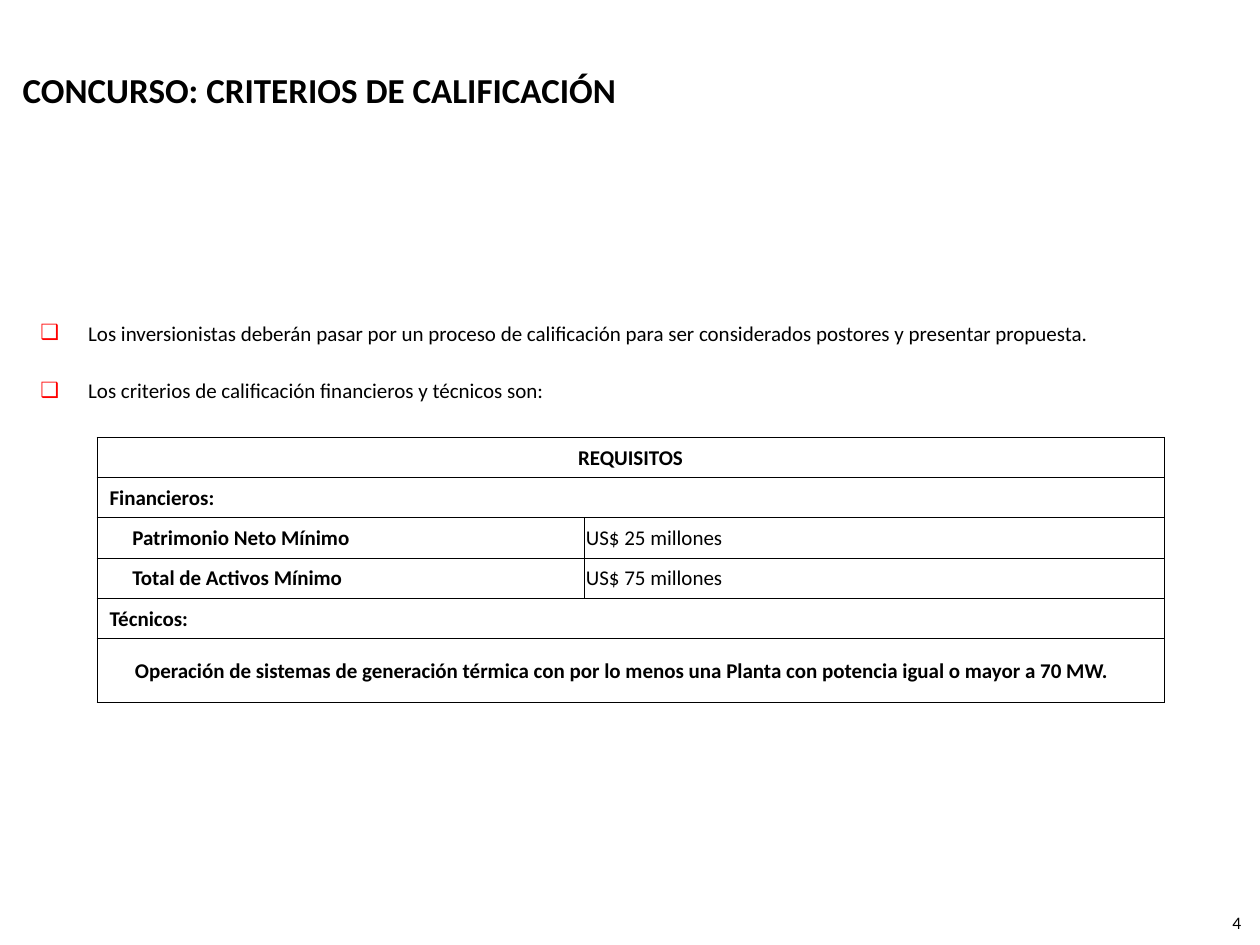
import pptx
import pptx.util
import pptx.dml.color
import pptx.enum.text
import pptx.oxml
import pptx.oxml.ns
from lxml import etree

BLACK = pptx.dml.color.RGBColor(0, 0, 0)
RED = pptx.dml.color.RGBColor(255, 0, 0)
WIDTH, HEIGHT = pptx.util.Inches(10), pptx.util.Inches(7.5)
FONT = "Calibri"
ALIGN = pptx.enum.text.PP_ALIGN
MIDDLE = pptx.enum.text.MSO_ANCHOR.MIDDLE

TITLE = "CONCURSO: CRITERIOS DE CALIFICACIÓN"
BULLETS = [
    "Los inversionistas deberán pasar por un proceso de calificación para ser considerados postores y presentar propuesta.",
    "Los criterios de calificación financieros y técnicos son:",
]
REQUIREMENTS = [
    ("REQUISITOS",),
    ("Financieros:",),
    ("Patrimonio Neto Mínimo", "US$ 25 millones"),
    ("Total de Activos Mínimo", "US$ 75 millones"),
    ("Técnicos:",),
    ("Operación de sistemas de generación térmica con por lo menos una Planta con potencia igual o mayor a 70 MW.",),
]
COLUMN_WIDTHS = [3.87, 4.6]
ROW_HEIGHTS = [0.32] * 5 + [0.51]
LABEL_INDENTS = [0.01, 0.1, 0.28, 0.28, 0.1, 0.3]


def percent(left, top, width, height):
    return [int(share * size / 100) for share, size in
            zip((left, top, width, height), (WIDTH, HEIGHT) * 2)]


def apply(obj, values):
    for name, value in values.items():
        setattr(obj, name, value)


def place(sp, box):
    apply(sp, dict(zip(("left", "top", "width", "height"), box)))


def write(p, text, size, bold=False, align=ALIGN.LEFT):
    r = p.add_run()
    r.text = text
    p.alignment = align
    apply(r.font, {"name": FONT, "size": pptx.util.Pt(size), "bold": bold})
    r.font.color.rgb = BLACK


def add_title(s):
    sp = s.shapes.title
    place(sp, percent(0.8, 5.47, 94.5, 8))
    tf = sp.text_frame
    apply(tf, {"vertical_anchor": MIDDLE, "word_wrap": True,
               "auto_size": pptx.enum.text.MSO_AUTO_SIZE.NONE})
    write(tf.paragraphs[0], TITLE, 20, True)


def add_bullet(p):
    pPr = p._p.get_or_add_pPr()
    indent = pptx.util.Inches(0.38)
    pPr.set("marL", str(indent))
    pPr.set("indent", str(-indent))
    color = etree.SubElement(pPr, pptx.oxml.ns.qn("a:buClr"))
    etree.SubElement(color, pptx.oxml.ns.qn("a:srgbClr"), val=str(RED))
    etree.SubElement(pPr, pptx.oxml.ns.qn("a:buChar"), char="❑")


def add_list(s):
    sp = s.placeholders[1]
    place(sp, percent(2.2, 33.2, 94.8, 48.4))
    tf = sp.text_frame
    tf.auto_size = pptx.enum.text.MSO_AUTO_SIZE.NONE
    for i, text in enumerate(BULLETS):
        p = tf.add_paragraph() if i else tf.paragraphs[0]
        add_bullet(p)
        p.space_before = pptx.util.Pt(18.5 if i else 0)
        write(p, text, 12)


def add_borders(cell):
    tcPr = cell._tc.get_or_add_tcPr()
    for i, side in enumerate(("lnL", "lnR", "lnT", "lnB")):
        tcPr.insert(i, pptx.oxml.parse_xml(
            f'<a:{side} {pptx.oxml.ns.nsdecls("a")} w="{pptx.util.Pt(0.5)}">'
            f'<a:solidFill><a:srgbClr val="{BLACK}"/></a:solidFill></a:{side}>'))


def format_cell(cell, indent):
    cell.fill.background()
    add_borders(cell)
    apply(cell, {"vertical_anchor": MIDDLE,
                 "margin_left": pptx.util.Inches(indent),
                 "margin_right": pptx.util.Inches(0.01),
                 "margin_top": pptx.util.Inches(0.01),
                 "margin_bottom": 0})


def add_requirements(s):
    box = percent(7.7, 46.27, 84.7, 28.13)
    table = s.shapes.add_table(len(ROW_HEIGHTS), len(COLUMN_WIDTHS), *box).table
    apply(table, {"first_row": False, "horz_banding": False})
    for column, width in zip(table.columns, COLUMN_WIDTHS):
        column.width = pptx.util.Inches(width)
    for i, texts in enumerate(REQUIREMENTS):
        table.rows[i].height = pptx.util.Inches(ROW_HEIGHTS[i])
        for j in range(len(COLUMN_WIDTHS)):
            format_cell(table.cell(i, j), 0.01 if j else LABEL_INDENTS[i])
        if len(texts) == 1:
            table.cell(i, 0).merge(table.cell(i, 1))
        for j, text in enumerate(texts):
            write(table.cell(i, j).text_frame.paragraphs[0], text, 12,
                  j == 0, ALIGN.LEFT if i else ALIGN.CENTER)


def add_page_number(s):
    tf = s.shapes.add_textbox(*percent(94.5, 95.87, 5, 4.27)).text_frame
    tf.word_wrap = True
    write(tf.paragraphs[0], "4", 10, align=ALIGN.RIGHT)


def main():
    prs = pptx.Presentation()
    apply(prs, {"slide_width": WIDTH, "slide_height": HEIGHT})
    s = prs.slides.add_slide(prs.slide_layouts[1])
    add_title(s)
    add_list(s)
    add_page_number(s)
    add_requirements(s)
    prs.save("out.pptx")


if __name__ == "__main__":
    main()
